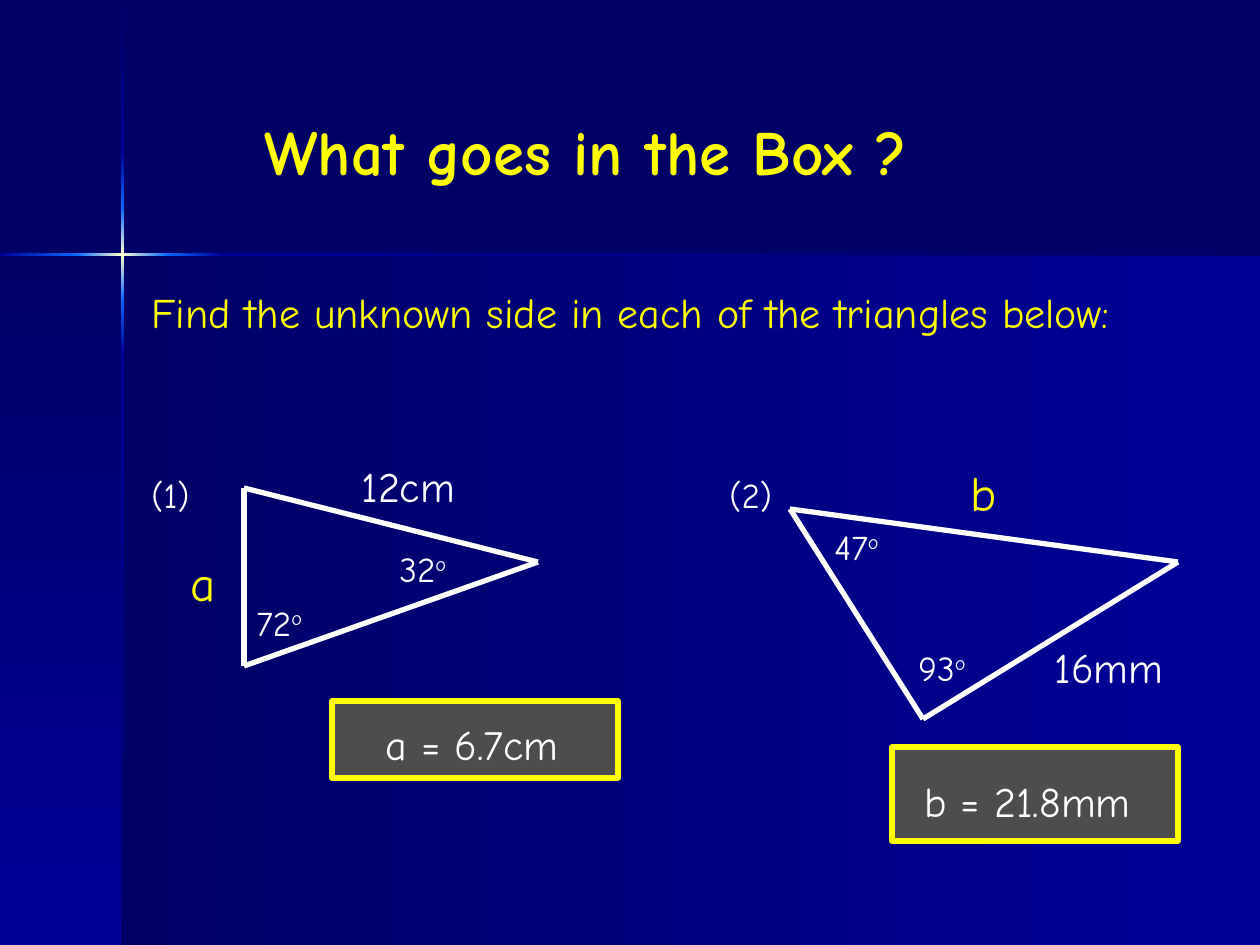
import copy
import itertools

import pptx
import pptx.util
from pptx.dml.color import RGBColor
from pptx.enum.shapes import MSO_CONNECTOR, MSO_SHAPE
from pptx.enum.text import MSO_ANCHOR, MSO_AUTO_SIZE, PP_ALIGN
from pptx.oxml.xmlchemy import OxmlElement

PX = 914400 / 126
WIDTH, HEIGHT = 1260, 945
FONT = "Comic Neue"

NAVY = RGBColor(0x00, 0x00, 0x66)
BLUE = RGBColor(0x00, 0x00, 0x99)
SKY = RGBColor(0x00, 0x66, 0xFF)
CREAM = RGBColor(0xFF, 0xFF, 0xCC)
YELLOW = RGBColor(0xFF, 0xFF, 0x00)
WHITE = RGBColor(0xFF, 0xFF, 0xFF)
GREY = RGBColor(0x4D, 0x4D, 0x4D)


def emu(*lengths):
    return [pptx.util.Emu(round(n * PX)) for n in lengths]


def add_rect(shapes, box):
    sp = shapes.add_shape(MSO_SHAPE.RECTANGLE, *emu(*box))
    sp.shadow.inherit = False
    return sp


def add_gradient(shapes, box, colors, vertical=False):
    """Borderless rectangle with evenly spaced colours, left to right or top to bottom."""
    sp = add_rect(shapes, box)
    sp.line.fill.background()
    sp.fill.gradient()
    sp.fill.gradient_angle = 270 if vertical else 0
    stops = sp._element.spPr.find(".//" + pptx.oxml.ns.qn("a:gsLst"))
    for _ in colors[2:]:
        stops.append(copy.deepcopy(stops[0]))
    for i, (stop, color) in enumerate(zip(sp.fill.gradient_stops, colors)):
        stop.position = i / (len(colors) - 1)
        stop.color.rgb = color


def add_beam(shapes, stops, vertical=False):
    """Thin band that changes colour from stop to stop and glows between the two sky stops."""
    for (a, start), (b, end) in itertools.pairwise(stops):
        colors = [SKY, CREAM, SKY] if start == end else [start, end]
        box = (121, a, 3, b - a) if vertical else (a, 253, b - a, 3)
        add_gradient(shapes, box, colors, vertical)


def add_backdrop(s):
    s.background.fill.solid()
    s.background.fill.fore_color.rgb = NAVY
    shapes = s.shapes.add_group_shape().shapes
    add_gradient(shapes, (122, 255, WIDTH - 122, HEIGHT - 255), [NAVY, BLUE])
    add_gradient(shapes, (0, 255, 122, HEIGHT - 255), [NAVY, BLUE], vertical=True)
    add_beam(shapes, [(1, NAVY), (152, BLUE), (208, SKY), (300, SKY),
                      (355, BLUE), (HEIGHT, NAVY)], vertical=True)
    add_beam(shapes, [(0, BLUE), (76, SKY), (168, SKY), (223, BLUE), (WIDTH, NAVY)])


def format_font(font, size, color):
    font.name = FONT
    font.size = pptx.util.Pt(size)
    font.color.rgb = color


def add_title(s, text):
    title = s.shapes.title
    title.left, title.top, title.width, title.height = emu(252, 108, 785, 84)
    tf = title.text_frame
    tf.text = text
    tf.vertical_anchor = MSO_ANCHOR.MIDDLE
    p = tf.paragraphs[0]
    p.alignment = PP_ALIGN.LEFT
    format_font(p.font, 36, YELLOW)
    p.font.bold = True


def add_text(shapes, box, text, size=24, color=WHITE):
    tf = shapes.add_textbox(*emu(*box)).text_frame
    tf.word_wrap = True
    tf.auto_size = MSO_AUTO_SIZE.SHAPE_TO_FIT_TEXT
    p = tf.paragraphs[0]
    p.add_run().text = text
    format_font(p.font, size, color)
    return p


def add_angle(shapes, box, degrees):
    """Angle label with a raised "o" as its degree sign."""
    r = add_text(shapes, box, degrees, 20).add_run()
    r.text = "o"
    r._r.get_or_add_rPr().set("baseline", "30000")


def add_triangle(shapes, corners):
    for start, end in itertools.combinations(corners, 2):
        line = shapes.add_connector(MSO_CONNECTOR.STRAIGHT, *emu(*start, *end))
        line.line.color.rgb = WHITE
        line.line.width = pptx.util.Pt(3)
        line._element.spPr.append(OxmlElement("a:effectLst"))


def add_problem(s, number, corners, angles, known, unknown):
    """Numbered triangle; each label is a pair of box and text."""
    shapes = s.shapes.add_group_shape().shapes
    add_text(shapes, *number, size=20)
    add_triangle(shapes, corners)
    for angle in angles:
        add_angle(shapes, *angle)
    add_text(shapes, *known)
    add_text(shapes, *unknown, size=28, color=YELLOW)


def add_answer(s, frame, box, text):
    sp = add_rect(s.shapes, frame)
    sp.fill.solid()
    sp.fill.fore_color.rgb = GREY
    sp.line.color.rgb = YELLOW
    sp.line.width = pptx.util.Pt(3)
    add_text(s.shapes, box, text)


def main():
    prs = pptx.Presentation()
    prs.slide_width, prs.slide_height = emu(WIDTH, HEIGHT)
    s = prs.slides.add_slide(prs.slide_layouts[5])
    add_backdrop(s)
    add_title(s, "What goes in the Box ?")
    add_text(s.shapes, (139, 280, 1091, 64),
             "Find the unknown side in each of the triangles below:", color=YELLOW)
    add_problem(
        s,
        number=((139, 467, 94, 63), "(1)"),
        corners=[(244, 488), (538, 562), (244, 666)],
        angles=[((244, 595, 84, 63), "72"), ((387, 541, 94, 63), "32")],
        known=((349, 454, 158, 63), "12cm"),
        unknown=((178, 546, 63, 72), "a"),
    )
    add_problem(
        s,
        number=((717, 467, 84, 63), "(2)"),
        corners=[(790, 509), (923, 719), (1178, 562)],
        angles=[((906, 640, 94, 63), "93"), ((822, 519, 94, 63), "47")],
        known=((1042, 635, 147, 63), "16mm"),
        unknown=((958, 456, 63, 72), "b"),
    )
    add_answer(s, (332, 701, 286, 77), (373, 712, 220, 63), "a = 6.7cm")
    add_answer(s, (892, 747, 286, 94), (912, 769, 246, 64), "b = 21.8mm")
    prs.save("out.pptx")


if __name__ == "__main__":
    main()
